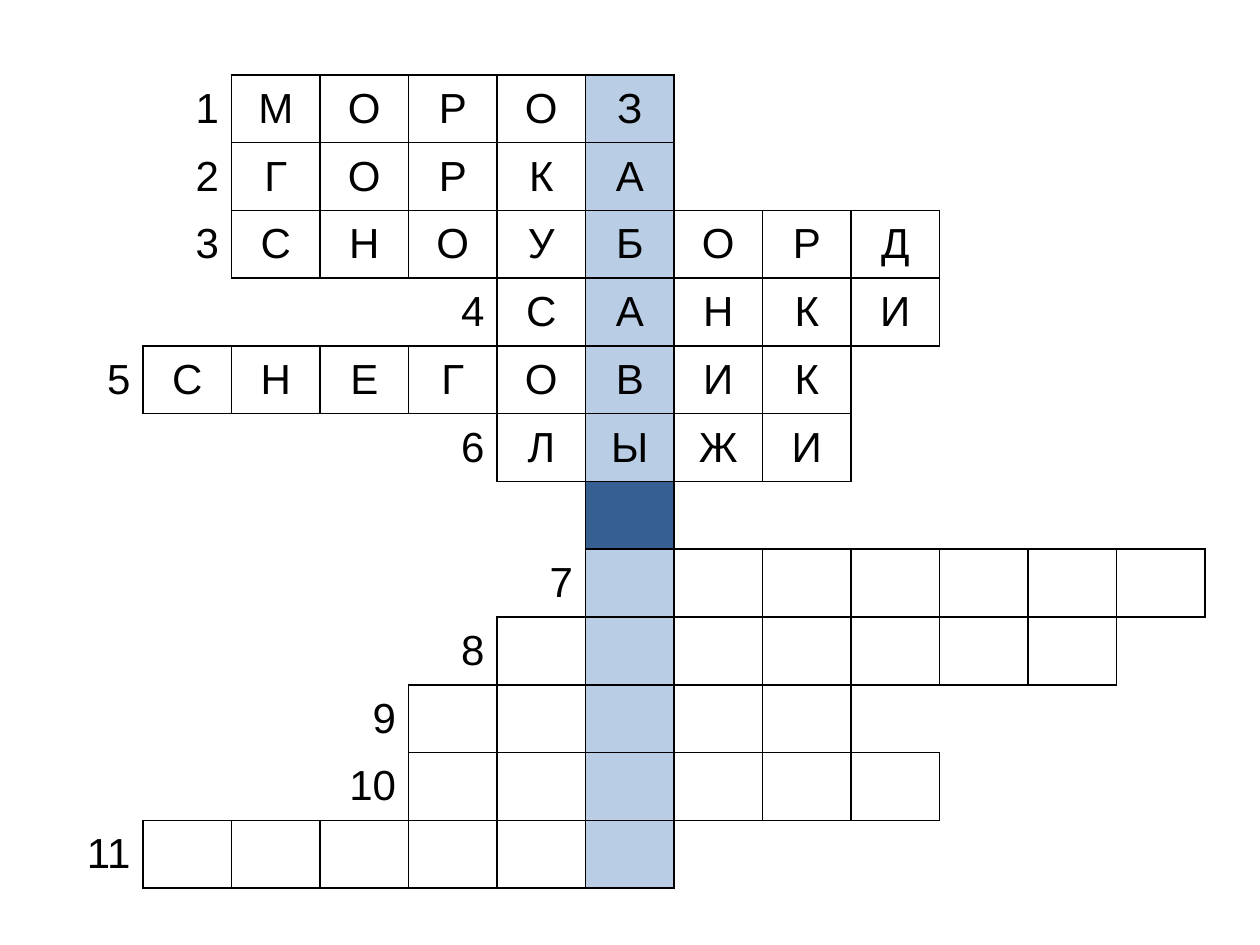
from lxml import etree
from pptx import Presentation
from pptx.dml.color import RGBColor
from pptx.enum.text import MSO_ANCHOR, PP_ALIGN
from pptx.oxml.ns import qn
from pptx.util import Cm, Pt

MIDDLE = MSO_ANCHOR.MIDDLE
CENTER, RIGHT = PP_ALIGN.CENTER, PP_ALIGN.RIGHT
COLORS = {"ink": "000000", "key": "B9CDE5", "gap": "376092"}
COLS, KEY = 13, 6

# Each row: number, first boxed column, count of boxes, letters
WORDS = [
    ("1", 2, 5, "МОРОЗ"),
    ("2", 2, 5, "ГОРКА"),
    ("3", 2, 8, "СНОУБОРД"),
    ("4", 5, 5, "САНКИ"),
    ("5", 1, 8, "СНЕГОВИК"),
    ("6", 5, 4, "ЛЫЖИ"),
    ("", 6, 1, ""),
    ("7", 6, 7, ""),
    ("8", 5, 7, ""),
    ("9", 4, 5, ""),
    ("10", 4, 6, ""),
    ("11", 1, 6, ""),
]
SIDES = {"lnL": (0, -1), "lnR": (0, 1), "lnT": (-1, 0), "lnB": (1, 0)}


def write(cell, text, align):
    cell.text_frame.text = text
    cell.vertical_anchor = MIDDLE
    par = cell.text_frame.paragraphs[0]
    par.alignment = align
    font = par.runs[0].font
    font.name, font.size = "Arial", Pt(24)
    font.color.rgb = RGBColor.from_string(COLORS["ink"])


def add_edge(cell, side, place, drawn):
    edge = etree.Element(qn("a:" + side), w=str(Pt(1)))
    if drawn:
        fill = etree.SubElement(edge, qn("a:solidFill"))
        etree.SubElement(fill, qn("a:srgbClr"), val=COLORS["ink"])
    else:
        etree.SubElement(edge, qn("a:noFill"))
    cell._tc.get_or_add_tcPr().insert(place, edge)


prs = Presentation()
prs.slide_width, prs.slide_height = Cm(25.4), Cm(19.05)
slide = prs.slides.add_slide(prs.slide_layouts[6])

# Crossword grid
frame = slide.shapes.add_table(
    len(WORDS), COLS, Cm(1.1), Cm(1.51), Cm(23.2), Cm(16.4))
table = frame.table
table.first_row = False
table.horz_banding = False

boxes = {(row, start + i)
         for row, (num, start, count, word) in enumerate(WORDS)
         for i in range(count)}

# Fills and borders: an edge shows where either neighbour is a box
for row, (num, start, count, word) in enumerate(WORDS):
    for col in range(COLS):
        cell = table.cell(row, col)
        if col == KEY:
            tint = COLORS["key" if num else "gap"]
            cell.fill.solid()
            cell.fill.fore_color.rgb = RGBColor.from_string(tint)
        else:
            cell.fill.background()
        for place, (side, (down, over)) in enumerate(SIDES.items()):
            near = (row + down, col + over)
            add_edge(cell, side, place, (row, col) in boxes or near in boxes)

    # Clue number and letters
    if num:
        write(table.cell(row, start - 1), num, RIGHT)
    for i, letter in enumerate(word):
        write(table.cell(row, start + i), letter, CENTER)

prs.save("out.pptx")
